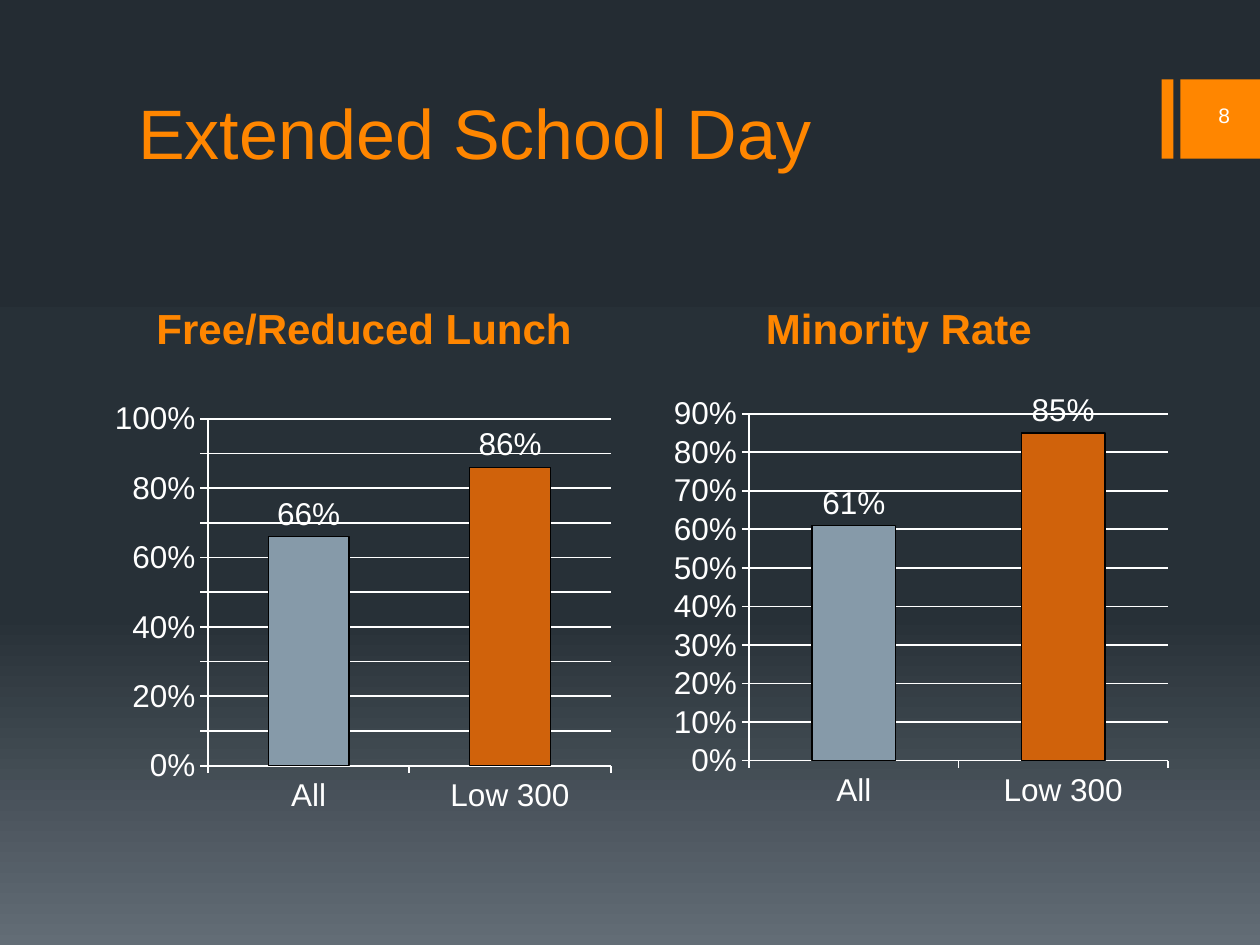
from copy import deepcopy

from lxml import etree
from pptx import Presentation
from pptx.chart.data import CategoryChartData
from pptx.dml.color import RGBColor
from pptx.enum.chart import XL_CHART_TYPE, XL_LABEL_POSITION, XL_TICK_MARK
from pptx.enum.shapes import MSO_SHAPE
from pptx.enum.text import MSO_ANCHOR, PP_ALIGN
from pptx.oxml.ns import qn
from pptx.util import Inches, Pt

COLUMNS = XL_CHART_TYPE.COLUMN_CLUSTERED
OUTSIDE_END = XL_LABEL_POSITION.OUTSIDE_END
TICK_OUT, TICK_NONE = XL_TICK_MARK.OUTSIDE, XL_TICK_MARK.NONE
RECT = MSO_SHAPE.RECTANGLE
BOTTOM, MIDDLE = MSO_ANCHOR.BOTTOM, MSO_ANCHOR.MIDDLE
LEFT, CENTER, RIGHT = PP_ALIGN.LEFT, PP_ALIGN.CENTER, PP_ALIGN.RIGHT

WIDTH, HEIGHT = 10, 7.5
FONT = "Arial"
ORANGE, WHITE, BLACK = "FF8600", "FFFFFF", "000000"
BAR_COLORS = ["869AA9", "D0620B"]
BACKDROP = [(0, "242C33"), (0.65, "273037"), (1, "636D76")]
GROUPS = ["All", "Low 300"]
PANELS = [
    {"heading": "Free/Reduced Lunch", "heading_box": (1.05, 2.17, 3.68, 0.68),
     "chart_box": (0.83, 3.12, 4.1, 3.4), "rates": [0.66, 0.86],
     "top": 1, "plot": {"x": 0.2, "y": 0.06, "w": 0.78, "h": 0.81}},
    {"heading": "Minority Rate ", "heading_box": (5.34, 2.17, 3.68, 0.68),
     "chart_box": (5.25, 3.08, 4.1, 3.4), "rates": [0.61, 0.85],
     "top": 0.9, "plot": {"x": 0.17, "y": 0.06, "w": 0.81, "h": 0.81}},
]


def rgb(code):
    return RGBColor.from_string(code)


def inches(box):
    return [Inches(length) for length in box]


def set_all(target, values):
    for key, value in values.items():
        setattr(target, key, value)


def paint_backdrop(slide):
    fill = slide.background.fill
    fill.gradient()
    fill.gradient_angle = 270
    stop_list = next(slide.element.iter(qn("a:gsLst")))
    stop_list.append(deepcopy(stop_list[-1]))
    for stop, (position, color) in zip(fill.gradient_stops, BACKDROP):
        stop.position = position
        stop.color.rgb = rgb(color)


def add_words(slide, box, words, size, color=ORANGE, bold=False,
              align=LEFT, anchor=BOTTOM):
    frame = slide.shapes.add_textbox(*inches(box)).text_frame
    set_all(frame, {"word_wrap": True, "vertical_anchor": anchor})
    line = frame.paragraphs[0]
    line.alignment = align
    run = line.add_run()
    run.text = words
    set_all(run.font, {"name": FONT, "size": Pt(size), "bold": bold})
    run.font.color.rgb = rgb(color)


def add_page_tab(slide, box, number):
    left, top, width, height = box
    bar = 0.12 * width
    tab = 0.81 * width
    for x, part in [(left, bar), (left + width - tab, tab)]:
        block = slide.shapes.add_shape(RECT, *inches((x, top, part, height)))
        block.shadow.inherit = False
        block.fill.solid()
        block.fill.fore_color.rgb = rgb(ORANGE)
        block.line.fill.background()
    number_box = (left - 0.5 * width, top + 0.19 * height,
                  1.32 * width, 0.52 * height)
    add_words(slide, number_box, number, 12, WHITE, align=RIGHT, anchor=MIDDLE)


def place_plot(chart, shares):
    area = next(chart.element.iter(qn("c:plotArea")))
    for old in area.findall(qn("c:layout")):
        area.remove(old)
    layout = etree.Element(qn("c:layout"))
    manual = etree.SubElement(layout, qn("c:manualLayout"))
    settings = {"layoutTarget": "inner", "xMode": "edge", "yMode": "edge", **shares}
    for tag, value in settings.items():
        etree.SubElement(manual, qn(f"c:{tag}")).set("val", str(value))
    area.insert(0, layout)


def format_axes(chart, top):
    values = chart.value_axis
    set_all(values, {"minimum_scale": 0, "maximum_scale": top, "major_unit": 0.1,
                     "has_major_gridlines": True})
    set_all(values.tick_labels, {"number_format": "0%",
                                 "number_format_is_linked": False})
    for axis in (values, chart.category_axis):
        set_all(axis, {"major_tick_mark": TICK_OUT, "minor_tick_mark": TICK_NONE})
    for part in (values, chart.category_axis, values.major_gridlines):
        part.format.line.color.rgb = rgb(WHITE)
        part.format.line.width = Pt(1)


def add_rate_chart(slide, box, rates, top, plot):
    data = CategoryChartData(number_format="0%")
    data.categories = GROUPS
    data.add_series("Series 1", rates)
    chart = slide.shapes.add_chart(COLUMNS, *inches(box), data).chart
    set_all(chart, {"has_legend": False, "has_title": False})
    set_all(chart.font, {"name": FONT, "size": Pt(18)})
    chart.font.color.rgb = rgb(WHITE)
    format_axes(chart, top)
    place_plot(chart, plot)

    columns = chart.plots[0]
    set_all(columns, {"gap_width": 150, "vary_by_categories": False,
                      "has_data_labels": True})
    set_all(columns.data_labels, {"show_value": True, "position": OUTSIDE_END,
                                  "number_format": "0%",
                                  "number_format_is_linked": False})
    for index, color in enumerate(BAR_COLORS):
        bar = columns.series[0].points[index].format
        bar.fill.solid()
        bar.fill.fore_color.rgb = rgb(color)
        bar.line.color.rgb = rgb(BLACK)
        bar.line.width = Pt(0.75)


def add_panel(slide, heading, heading_box, chart_box, rates, top, plot):
    add_words(slide, heading_box, heading, 24, bold=True, align=CENTER)
    add_rate_chart(slide, chart_box, rates, top, plot)


def main():
    deck = Presentation()
    set_all(deck, {"slide_width": Inches(WIDTH), "slide_height": Inches(HEIGHT)})
    slide = deck.slides.add_slide(deck.slide_layouts[6])
    paint_backdrop(slide)
    add_page_tab(slide, (9.22, 0.63, 0.78, 0.63), "8")
    add_words(slide, (1, 0.5, 8, 0.93), "Extended School Day", 40)
    for panel in PANELS:
        add_panel(slide, **panel)
    deck.save("out.pptx")


if __name__ == "__main__":
    main()
